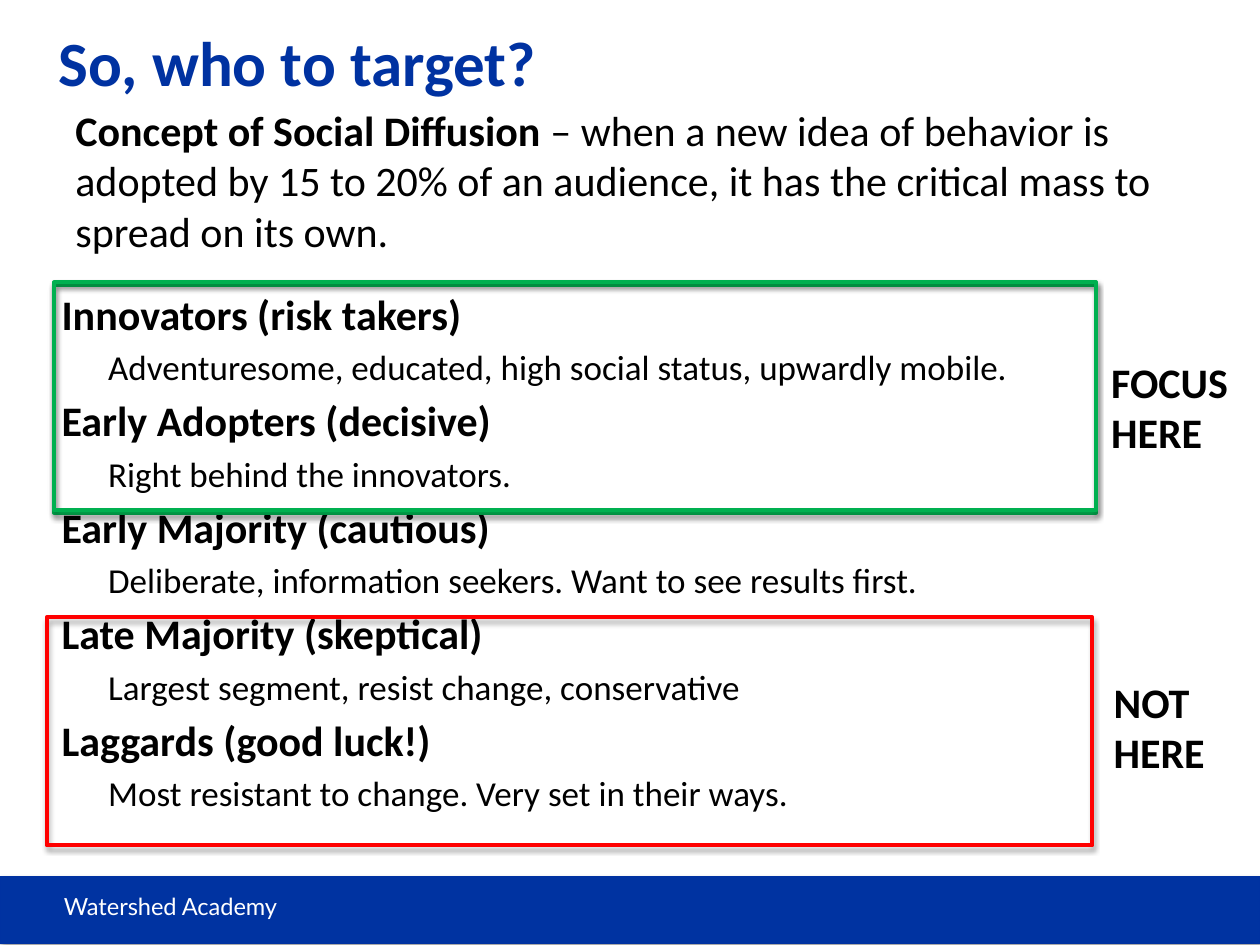
from dataclasses import dataclass

from lxml.etree import SubElement
from pptx import Presentation
from pptx.dml.color import RGBColor
from pptx.enum.shapes import MSO_SHAPE as Preset
from pptx.enum.text import MSO_ANCHOR as Anchor
from pptx.oxml.ns import qn
from pptx.util import Inches, Pt


@dataclass(frozen=True)
class Theme:
    navy: str = "0032A1"
    bar: str = "0033A1"
    white: str = "FFFFFF"
    black: str = "000000"
    green: str = "00B050"
    red: str = "FF0000"
    font: str = "Calibri"
    footer_font: str = "Lato"
    title_size: float = 36
    heading_size: float = 24
    detail_size: float = 20
    footer_size: float = 13.5
    paragraph_gap: float = 4
    detail_indent: float = 0.37


THEME = Theme()

ADOPTER_GROUPS = [
    ("Innovators (risk takers)",
     "Adventuresome, educated, high social status, upwardly mobile."),
    ("Early Adopters (decisive)", "Right behind the innovators."),
    ("Early Majority (cautious)",
     "Deliberate, information seekers. Want to see results first."),
    ("Late Majority (skeptical)", "Largest segment, resist change, conservative"),
    ("Laggards (good luck!)", "Most resistant to change. Very set in their ways."),
]


def add_run(paragraph, text, size, bold=False, color=THEME.black, font=THEME.font):
    run = paragraph.add_run()
    run.text = text
    run.font.size = Pt(size)
    run.font.bold = bold
    run.font.name = font
    run.font.color.rgb = RGBColor.from_string(color)


def add_text_frame(slide, box):
    frame = slide.shapes.add_textbox(*map(Inches, box)).text_frame
    frame.word_wrap = True
    return frame


def add_label(slide, box, text, size, **style):
    frame = add_text_frame(slide, box)
    add_run(frame.paragraphs[0], text, size, **style)
    return frame


def add_shadow(shape):
    shape.shadow.inherit = False
    effects = shape._element.spPr.find(qn("a:effectLst"))
    shadow = SubElement(effects, qn("a:outerShdw"), blurRad=str(Pt(3.1)),
                        dist=str(Pt(1.8)), dir="5400000", rotWithShape="0")
    color = SubElement(shadow, qn("a:srgbClr"), val=THEME.black)
    SubElement(color, qn("a:alpha"), val="35000")


def add_rectangle(slide, box, line_color, line_width, fill_color=None):
    shape = slide.shapes.add_shape(Preset.RECTANGLE, *map(Inches, box))
    if fill_color:
        shape.fill.solid()
        shape.fill.fore_color.rgb = RGBColor.from_string(fill_color)
    else:
        shape.fill.background()
    shape.line.color.rgb = RGBColor.from_string(line_color)
    shape.line.width = Pt(line_width)
    add_shadow(shape)


def add_footer(slide):
    add_rectangle(slide, (0, 6.96, 10, 0.53), THEME.navy, 0.75, THEME.bar)
    add_label(slide, (0.41, 7.03, 3.36, 0.33), "Watershed Academy",
              THEME.footer_size, color=THEME.white, font=THEME.footer_font)


def add_adopter_list(slide, box):
    frame = add_text_frame(slide, box)
    for index, (heading, detail) in enumerate(ADOPTER_GROUPS):
        paragraph = frame.add_paragraph() if index else frame.paragraphs[0]
        if index:
            paragraph.space_before = Pt(THEME.paragraph_gap)
        add_run(paragraph, heading, THEME.heading_size, bold=True)
        paragraph = frame.add_paragraph()
        paragraph.level = 1
        paragraph.space_before = Pt(THEME.paragraph_gap)
        properties = paragraph._p.get_or_add_pPr()
        properties.set("marL", str(Inches(THEME.detail_indent)))
        properties.set("indent", "0")
        add_run(paragraph, detail, THEME.detail_size)


def add_concept(slide, box):
    paragraph = add_text_frame(slide, box).paragraphs[0]
    add_run(paragraph, "Concept of Social Diffusion ", THEME.heading_size, bold=True)
    add_run(paragraph, "– when a new idea of behavior is adopted by 15 to 20% of an "
            "audience, it has the critical mass to spread on its own.",
            THEME.heading_size)


def main():
    presentation = Presentation()
    presentation.slide_width = Inches(10)
    presentation.slide_height = Inches(7.5)
    slide = presentation.slides.add_slide(presentation.slide_layouts[6])

    add_footer(slide)
    title = add_label(slide, (0.37, -0.01, 9.13, 1), "So, who to target?",
                      THEME.title_size, bold=True, color=THEME.navy)
    title.vertical_anchor = Anchor.MIDDLE
    add_adopter_list(slide, (0.39, 2.24, 8.28, 5.42))

    add_rectangle(slide, (0.43, 2.26, 8.27, 1.81), THEME.green, 2.25)
    add_label(slide, (8.72, 2.78, 1.38, 0.76), "FOCUS HERE",
              THEME.heading_size, bold=True)
    add_rectangle(slide, (0.37, 4.9, 8.3, 1.81), THEME.red, 2.25)
    add_label(slide, (8.74, 5.32, 1.44, 0.97), "NOT HERE",
              THEME.heading_size, bold=True)
    add_concept(slide, (0.5, 0.78, 9.52, 1.31))
    add_rectangle(slide, (0.43, 2.24, 8.27, 1.81), THEME.green, 2.25)

    presentation.save("out.pptx")


if __name__ == "__main__":
    main()
